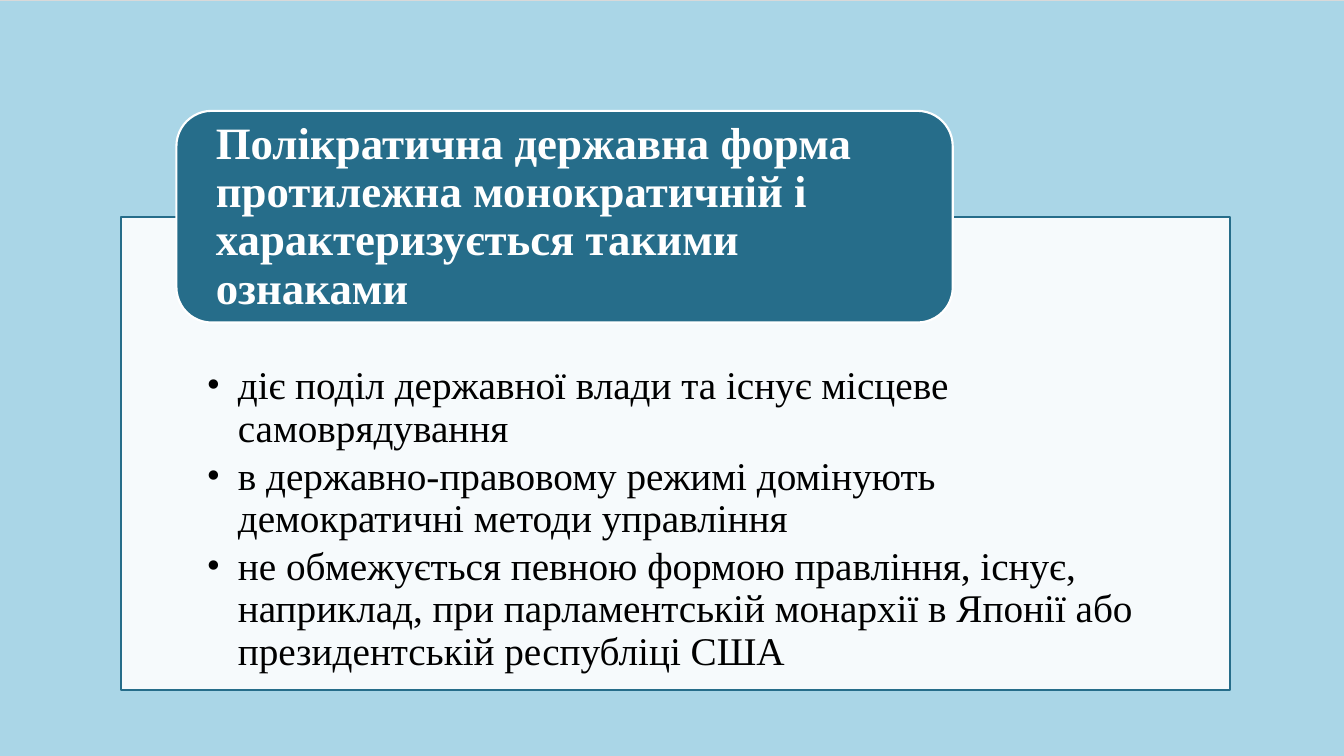
from lxml.etree import SubElement
from pptx import Presentation
from pptx.dml.color import RGBColor
from pptx.enum.dml import MSO_PATTERN as PATTERN
from pptx.enum.shapes import MSO_SHAPE as SHAPE
from pptx.enum.text import MSO_ANCHOR as ANCHOR, MSO_AUTO_SIZE as AUTO, PP_ALIGN as ALIGN
from pptx.oxml.ns import qn
from pptx.util import Pt

PX = 9144
TITLE_ONLY = 5
FONT = "Times New Roman"
COLORS = {"sky": "AAD6E7", "gray": "D9D9D9", "teal": "266D8A", "white": "FFFFFF", "black": "000000"}
TITLE = ["Полікратична державна форма", "протилежна монократичній і характеризується такими ознаками"]
FEATURES = [
    "діє поділ державної влади та існує місцеве самоврядування",
    "в державно-правовому режимі домінують демократичні методи управління",
    "не обмежується певною формою правління, існує, наприклад, "
    "при парламентській монархії в Японії або президентській республіці США",
]


def rgb(name):
    return RGBColor.from_string(COLORS[name])


def apply(obj, values):
    for name, value in values.items():
        setattr(obj, name, value)


class Deck:
    """Hold the style and the current slide, and draw each kind of element."""

    def __init__(self, width, height):
        self.prs = Presentation()
        apply(self.prs, {"slide_width": width * PX, "slide_height": height * PX})
        self.s = self.prs.slides.add_slide(self.prs.slide_layouts[TITLE_ONLY])

    def background(self, fore, back):
        fill = self.s.background.fill
        fill.patterned()
        fill.pattern = PATTERN.DARK_HORIZONTAL
        fill.fore_color.rgb = rgb(fore)
        fill.back_color.rgb = rgb(back)

    def box(self, kind, at, fill, line, alpha=100):
        sp = self.s.shapes.add_shape(kind, *(v * PX for v in at))
        sp.shadow.inherit = False
        sp.fill.solid()
        sp.fill.fore_color.rgb = rgb(fill)
        sp.line.color.rgb = rgb(line)
        sp.line.width = Pt(1.5)
        if alpha < 100:
            color = sp._element.spPr.find(qn("a:solidFill"))[0]
            SubElement(color, qn("a:alpha"), val=str(alpha * 1000))
        return sp

    def frame(self, sp, insets, anchor):
        sides = ("margin_left", "margin_top", "margin_right", "margin_bottom")
        tf = sp.text_frame
        apply(tf, {"word_wrap": True, "auto_size": AUTO.NONE, "vertical_anchor": anchor})
        apply(tf, {side: v * PX for side, v in zip(sides, insets)})
        return tf

    def run(self, p, text, size, color, bold=False):
        r = p.add_run()
        r.text = text
        apply(r.font, {"name": FONT, "size": Pt(size), "bold": bold})
        r.font.color.rgb = rgb(color)

    def title(self, at, lines, insets):
        sp = self.s.shapes.title
        apply(sp, dict(zip(("left", "top", "width", "height"), (v * PX for v in at))))
        self.s.shapes._spTree.append(sp._element)
        p = self.frame(sp, insets, ANCHOR.MIDDLE).paragraphs[0]
        apply(p, {"alignment": ALIGN.LEFT, "line_spacing": 0.9, "space_before": Pt(0)})
        for i, line in enumerate(lines):
            if i:
                p.add_line_break()
            self.run(p, line, 32, "white", True)

    def bullets(self, sp, items, insets, indent):
        tf = self.frame(sp, insets, ANCHOR.TOP)
        for i, item in enumerate(items):
            p = tf.add_paragraph() if i else tf.paragraphs[0]
            apply(p, {"level": 1, "alignment": ALIGN.LEFT, "line_spacing": 0.9, "space_after": Pt(4)})
            self.run(p, item, 28, "black")
            pPr = p._p.get_or_add_pPr()
            pPr.set("marL", str(indent * PX))
            pPr.set("indent", str(-indent * PX))
            bullet_color = SubElement(pPr, qn("a:buClr"))
            SubElement(bullet_color, qn("a:srgbClr"), val=COLORS["black"])
            SubElement(pPr, qn("a:buFont"), typeface=FONT)
            SubElement(pPr, qn("a:buChar"), char="•")


def main():
    deck = Deck(1333, 750)
    deck.background("sky", "gray")
    card = deck.box(SHAPE.RECTANGLE, (120, 215, 1100, 470), "white", "teal", alpha=90)
    deck.bullets(card, FEATURES, (85, 148, 85, 22), indent=31)
    deck.box(SHAPE.ROUNDED_RECTANGLE, (175, 110, 770, 210), "teal", "white")
    deck.title((185, 121, 750, 189), TITLE, (29, 0, 29, 0))
    deck.prs.save("out.pptx")


if __name__ == "__main__":
    main()
